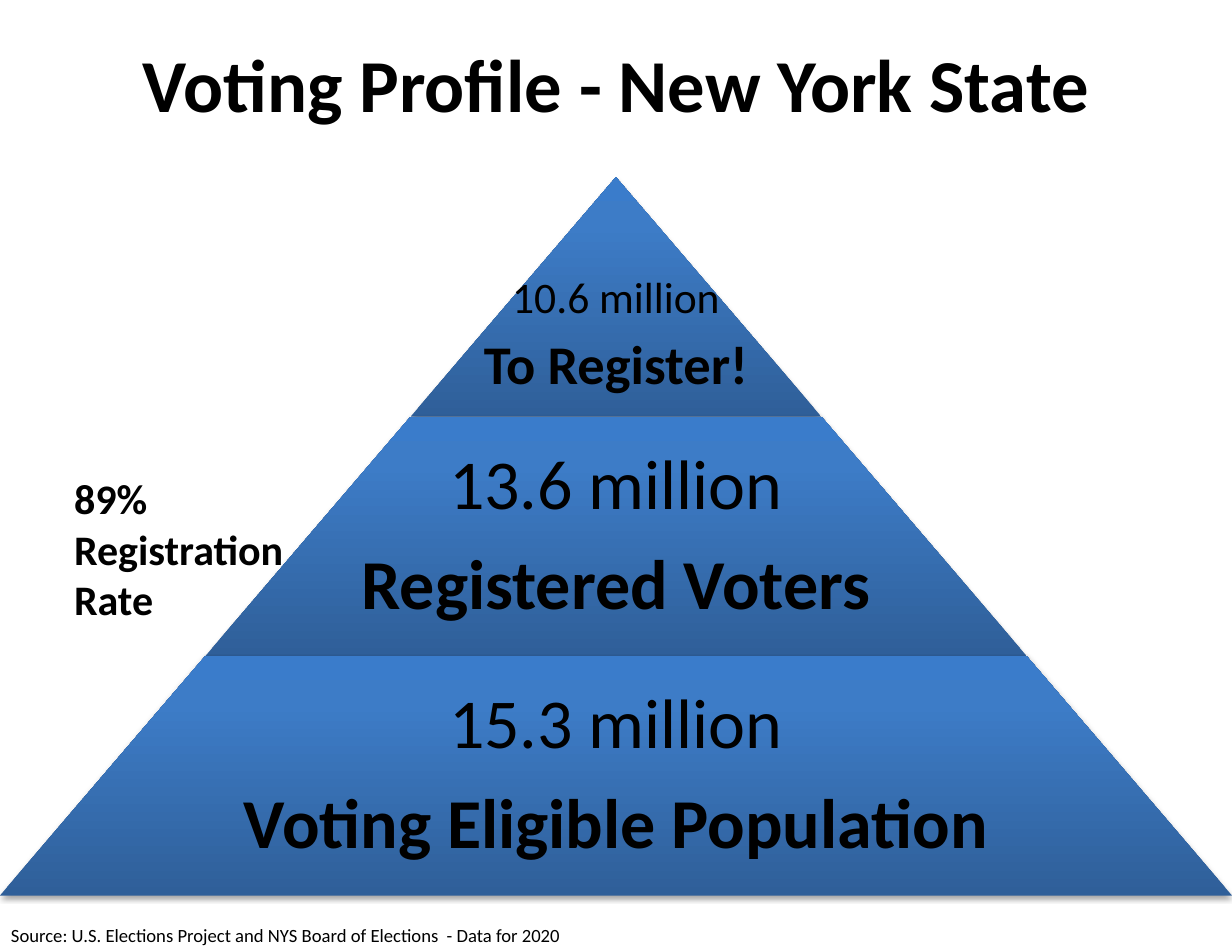
from lxml import etree
from pptx import Presentation, util as u
from pptx.dml.color import RGBColor
from pptx.enum import shapes, text
from pptx.oxml.ns import nsdecls

HUES = {"ink": "000000", "dark": "2F5F99", "mid": "3D7CC7", "light": "3A7CCB"}
FONT = "Calibri"
WIDE, HIGH = 27.94, 21.59
PEAK, STEP = 4.02, 5.43  # top of the pyramid and height of a level

# Each level: text width, side inset, top inset, lines of (words, size, bold)
LEVELS = [
    (9.31, 0.12, 1.9, [("10.6 million", 28, False), ("To Register!", 35, True)]),
    (12.11, 0.15, 0.15, [("13.6 million", 45, False), ("Registered Voters", 45, True)]),
    (18.16, 0.15, 0.15, [("15.3 million", 45, False),
                         ("Voting Eligible Population", 45, True)]),
]


def add_run(para, words, size, bold=False):
    run = para.add_run()
    run.text = words
    font = run.font
    font.name, font.size, font.bold = FONT, u.Pt(size), bold
    font.color.rgb = RGBColor.from_string(HUES["ink"])


def set_frame(frame, pads, anchor=text.MSO_ANCHOR.TOP):
    frame.word_wrap = True
    frame.auto_size = text.MSO_AUTO_SIZE.NONE
    frame.vertical_anchor = anchor
    left, top, right, base = (u.Cm(pad) for pad in pads)
    frame.margin_left, frame.margin_top = left, top
    frame.margin_right, frame.margin_bottom = right, base


def add_text(slide, box, lines, pads, anchor=text.MSO_ANCHOR.TOP, stack=False):
    frame = slide.shapes.add_textbox(*(u.Cm(n) for n in box)).text_frame
    set_frame(frame, pads, anchor)
    for i, (words, size, bold) in enumerate(lines):
        para = frame.add_paragraph() if i else frame.paragraphs[0]
        add_run(para, words, size, bold)
        if stack:
            para.alignment = text.PP_ALIGN.CENTER
            para.line_spacing = 0.9
            para.space_after = u.Pt(size * 0.35)


def add_title(slide, words):
    title = slide.shapes.title
    title.left, title.top = u.Cm(1.4), u.Cm(0.86)
    title.width, title.height = u.Cm(25.15), u.Cm(3.45)
    set_frame(title.text_frame, (0, 0, 0, 0))
    para = title.text_frame.paragraphs[0]
    para.alignment = text.PP_ALIGN.CENTER
    add_run(para, words, 48, True)


def add_slab(slide, left, top, width):
    slab = slide.shapes.add_shape(shapes.MSO_SHAPE.TRAPEZOID, u.Cm(left),
                                  u.Cm(top), u.Cm(width), u.Cm(STEP))
    slab.adjustments[0] = WIDE / 6 / STEP
    # Three-stop gradient from the base up, and a soft shadow below
    stops = "".join(
        f'<a:gs pos="{pos}"><a:srgbClr val="{HUES[hue]}"/></a:gs>'
        for pos, hue in ((0, "dark"), (80000, "mid"), (100000, "light")))
    props = slab.element.spPr
    props.append(etree.fromstring(
        f'<a:gradFill {nsdecls("a")} rotWithShape="1"><a:gsLst>{stops}</a:gsLst>'
        '<a:lin ang="16200000" scaled="0"/></a:gradFill>'))
    slab.line.fill.background()
    props.append(etree.fromstring(
        f'<a:effectLst {nsdecls("a")}><a:outerShdw blurRad="{u.Pt(3.1)}" '
        f'dist="{u.Pt(1.8)}" dir="5400000" rotWithShape="0">'
        f'<a:srgbClr val="{HUES["ink"]}"><a:alpha val="35000"/></a:srgbClr>'
        '</a:outerShdw></a:effectLst>'))


def add_level(slide, i, width, side, head, lines):
    top, base = PEAK + i * STEP, WIDE * (i + 1) / 3
    add_slab(slide, (WIDE - base) / 2, top, base)
    add_text(slide, ((WIDE - width) / 2, top, width, STEP), lines,
             (side, head, side, side), text.MSO_ANCHOR.MIDDLE, True)


def main():
    deck = Presentation()
    deck.slide_width, deck.slide_height = u.Cm(WIDE), u.Cm(HIGH)
    slide = deck.slides.add_slide(deck.slide_layouts[5])
    add_title(slide, "Voting Profile - New York State")

    # Pyramid
    for i, level in enumerate(LEVELS):
        add_level(slide, i, *level)

    # Side note and source
    add_text(slide, (1.4, 10.57, 5.59, 3.76),
             [("89%", 27, True), ("Registration Rate", 27, True)],
             (0.28, 0.15, 0.28, 0.15))
    add_text(slide, (0, 20.83, 15.67, 0.76),
             [("Source: U.S. Elections Project and NYS Board of Elections"
               "  - Data for 2020", 12, False)],
             (0.25, 0.13, 0.25, 0.13))
    deck.save("out.pptx")


if __name__ == "__main__":
    main()
